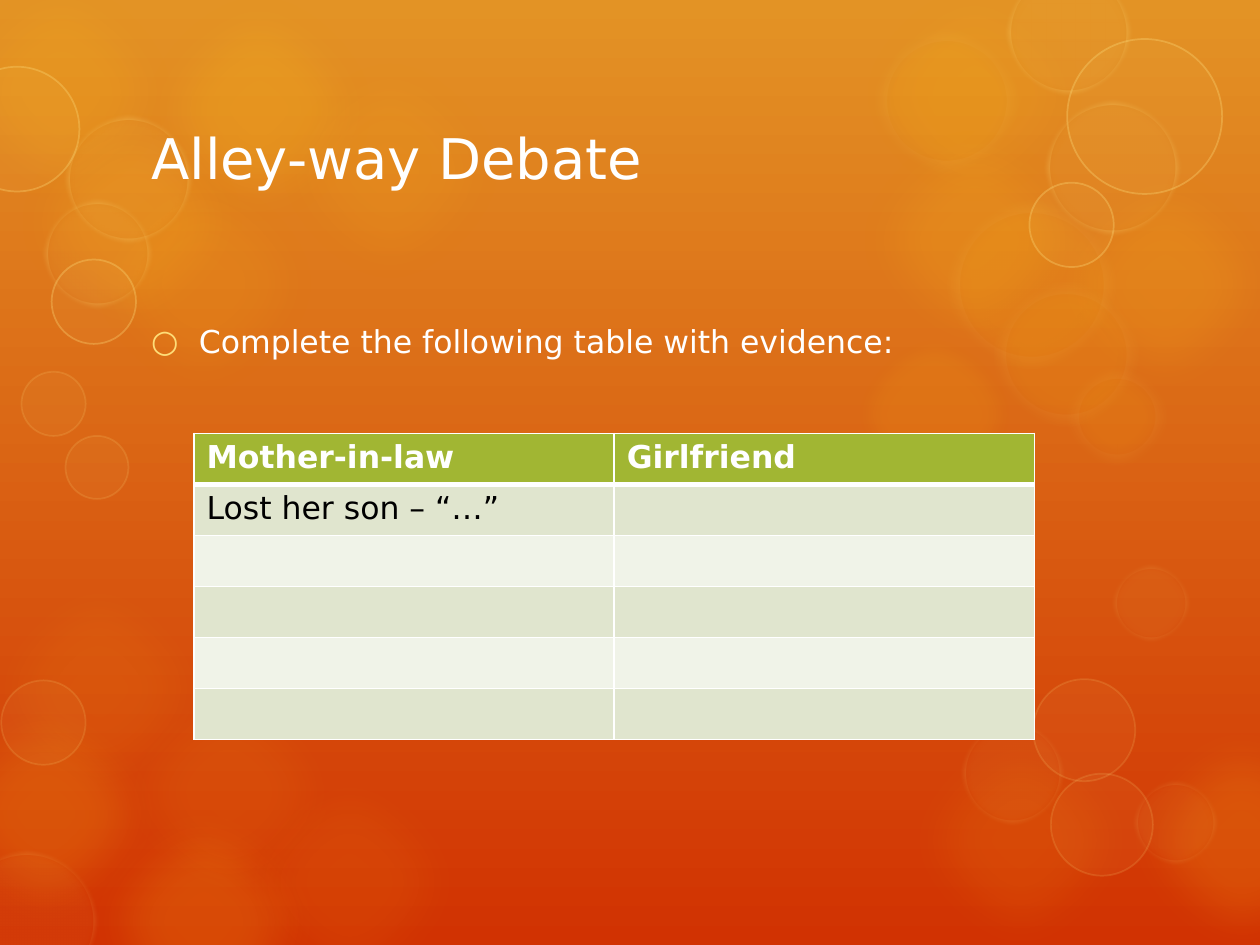
from lxml import etree
from pptx import Presentation, util as u
from pptx.dml.color import RGBColor
from pptx.enum import shapes, text
from pptx.oxml.ns import qn

# Content
TITLE = "Alley-way Debate"
TASK = "Complete the following table with evidence:"
EVIDENCE = [("Mother-in-law", "Girlfriend"), ("Lost her son – “…”", "")] + [("", "")] * 4

# Format
FONT, WHITE, BLACK, HEADER = "DejaVu Sans", "FFFFFF", "000000", "A1B633"
BANDS = ("E0E5CE", "F0F3E8")
SKY = ("E39325", "D13202")
GOLD, CREAM, PALE = "FDC61B", "FFE281", "FEEBAE"
WIDTH, HEIGHT = 10, 7.5
GLOW = 2.09

# Large soft lights: left, top, opacity
GLOWS = [(-0.26, 4.42, 8), (0.57, 1.2, 10), (2.05, 0.31, 10), (0.57, 6.27, 16),
         (-0.56, -0.32, 14), (1.01, -0.18, 20), (0, 0.72, 15), (6.69, -0.3, 10),
         (8.2, 1.2, 15), (8.81, 5.62, 16), (-0.68, 5.41, 16), (0.77, 5.24, 8),
         (6.69, 0.86, 15), (7.06, 5.62, 10), (1.73, 5.96, 8)]
# Blurred discs: left, top, diameter
DISCS = [(6.94, 0.23, 1.14), (7.52, 1.59, 1.33), (7.89, 2.24, 1.14), (8.47, 2.91, 0.79)]
# Rings by (line width, line opacity): left, top, diameter
RINGS = {
    (1, 15): [(0.01, 5.4, 0.67), (8.34, 6.14, 0.81), (8.2, 5.39, 0.81),
              (0.17, 2.95, 0.51), (0.52, 3.46, 0.5)],
    (5, 15): [(-0.35, 6.75, 1.12), (7.63, 5.73, 0.81), (9, 6.2, 0.66), (8.83, 4.48, 0.61)],
    (1, 30): [(-0.36, 0.53, 0.99), (0.41, 2.06, 0.67), (8.47, 0.31, 1.23), (8.17, 1.45, 0.67)],
    (5, 30): [(0.52, 0.92, 1), (0.35, 1.59, 0.85), (7.99, -0.23, 0.98), (8.3, 0.8, 1.06)],
}


def rgb(value):
    return RGBColor.from_string(value)


def child(parent, tag, **attrs):
    return etree.SubElement(parent, qn(tag), {k: str(v) for k, v in attrs.items()})


def paint(fill, color):
    fill.solid()
    fill.fore_color.rgb = rgb(color)


def light(slide, left, top, size, color, opacity, line=None, blur=0):
    """A translucent circle with an optional outline and soft edge."""
    circle = slide.shapes.add_shape(shapes.MSO_SHAPE.OVAL,
                                    *map(u.Inches, (left, top, size, size)))
    circle.shadow.inherit = False
    paint(circle.fill, color)
    opacities = [opacity]
    if line:
        line_color, width, line_opacity = line
        circle.line.width = u.Pt(width)
        paint(circle.line.fill, line_color)
        opacities.append(line_opacity)
    else:
        circle.line.fill.background()
    props = circle._element.spPr
    for tint, share in zip(props.iter(qn("a:srgbClr")), opacities):
        child(tint, "a:alpha", val=share * 1000)
    if blur:
        child(props.find(qn("a:effectLst")), "a:softEdge", rad=u.Pt(blur))


def write(frame, words, size, color, bold=False):
    line = frame.paragraphs[0]
    line.text = words
    line.alignment = text.PP_ALIGN.LEFT
    style = dict(name=FONT, size=u.Pt(size), bold=bold)
    for key, value in style.items():
        setattr(line.font, key, value)
    line.font.color.rgb = rgb(color)
    return line


def border(cell, sides):
    props = cell._tc.get_or_add_tcPr()
    for side, width in sides.items():
        edge = child(props, f"a:ln{side}", w=u.Pt(width))
        child(child(edge, "a:solidFill"), "a:srgbClr", val=WHITE)


deck = Presentation()
deck.slide_width, deck.slide_height = u.Inches(WIDTH), u.Inches(HEIGHT)
slide = deck.slides.add_slide(deck.slide_layouts[5])

# Background and lights
sky = slide.background.fill
sky.gradient()
sky.gradient_angle = 270
for stop, color in zip(sky.gradient_stops, SKY):
    stop.color.rgb = rgb(color)
for left, top, opacity in GLOWS:
    light(slide, left, top, GLOW, GOLD, opacity, blur=25)
light(slide, 6.75, 2.62, 1.33, GOLD, 10, blur=10)
for disc in DISCS:
    light(slide, *disc, GOLD, 10, (PALE, 14, 6), blur=10)
for (width, edge), rings in RINGS.items():
    for ring in rings:
        light(slide, *ring, CREAM, 5, (CREAM, width, edge), blur=4 if width > 1 else 0)

# Title, in front of the lights
title = slide.shapes.title
slide.shapes._spTree.append(title._element)
place = dict(left=1.1, top=0.74, width=7.79, height=1.01)
for key, value in place.items():
    setattr(title, key, u.Inches(value))
title.text_frame.vertical_anchor = text.MSO_ANCHOR.MIDDLE
write(title.text_frame, TITLE, 32, WHITE)

# Task with a ring bullet
task = slide.shapes.add_textbox(*map(u.Inches, (1.1, 1.98, 7.79, 4.43))).text_frame
task.word_wrap = True
task.margin_top = u.Inches(0.58)
bullet = write(task, TASK, 18, WHITE)._p.get_or_add_pPr()
bullet.set("marL", str(u.Inches(0.38)))
bullet.set("indent", str(-u.Inches(0.38)))
child(child(bullet, "a:buClr"), "a:srgbClr", val="FEDD78")
child(bullet, "a:buFont", typeface=FONT)
child(bullet, "a:buChar", char="○")

# Evidence table
table = slide.shapes.add_table(len(EVIDENCE), 2,
                               *map(u.Inches, (1.54, 3.44, 6.67, 2.43))).table
for r, row in enumerate(EVIDENCE):
    for c, words in enumerate(row):
        cell, head = table.cell(r, c), r == 0
        border(cell, dict(L=1, R=1, T=3 if r == 1 else 1, B=3 if head else 1))
        paint(cell.fill, HEADER if head else BANDS[(r - 1) % 2])
        write(cell.text_frame, words, 18, WHITE if head else BLACK, head)

deck.save("out.pptx")
